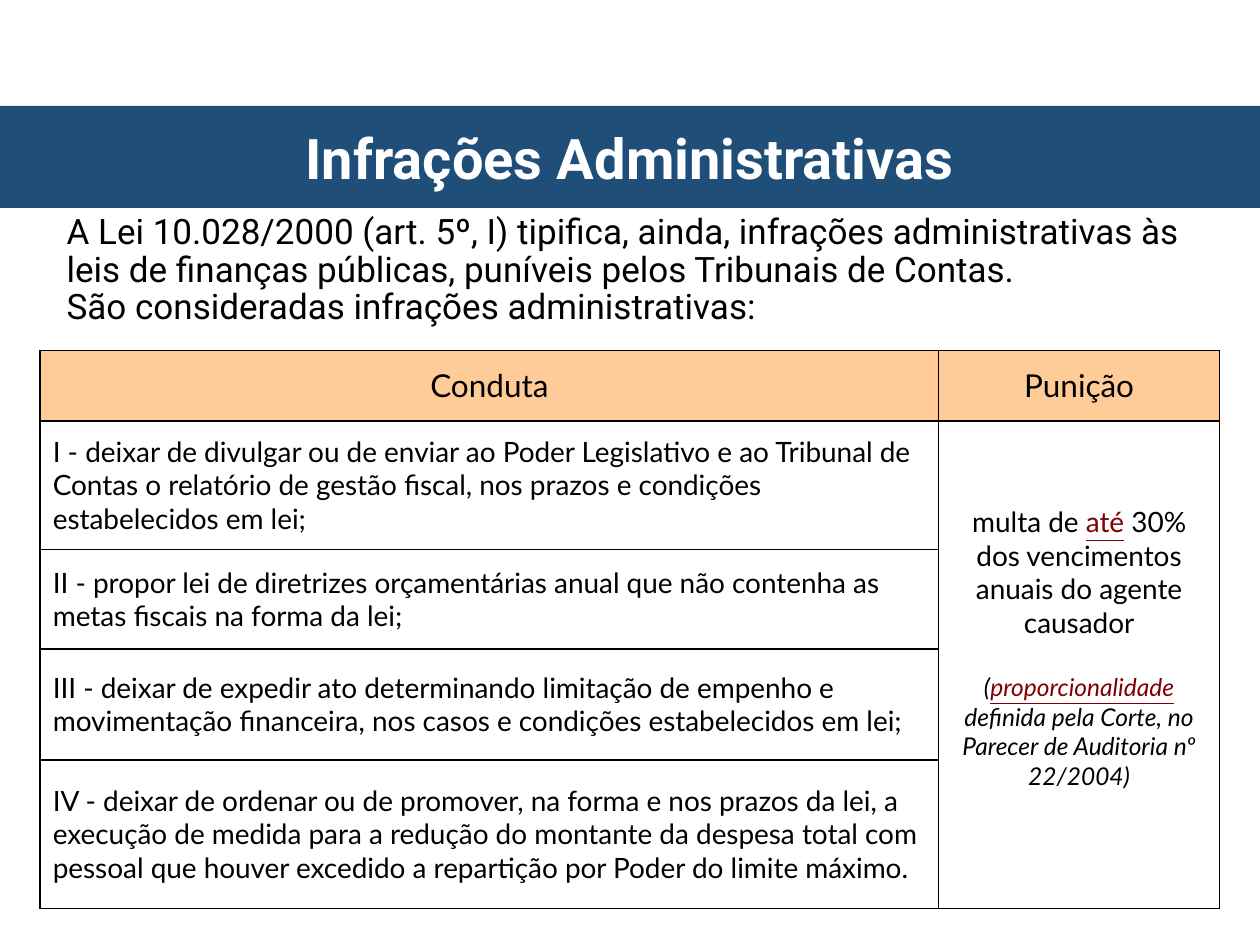
import pptx
import pptx.util
import pptx.dml.color
import pptx.enum.shapes
import pptx.enum.text
import pptx.oxml
import pptx.oxml.ns

Pt = pptx.util.Pt
RGBColor = pptx.dml.color.RGBColor
MIDDLE = pptx.enum.text.MSO_ANCHOR.MIDDLE
CENTER = pptx.enum.text.PP_ALIGN.CENTER
LEFT = pptx.enum.text.PP_ALIGN.LEFT

BLACK = RGBColor(0x00, 0x00, 0x00)
WHITE = RGBColor(0xFF, 0xFF, 0xFF)
NAVY = RGBColor(0x1F, 0x4E, 0x79)
PEACH = RGBColor(0xFF, 0xCC, 0x99)
MAROON = RGBColor(0x80, 0x00, 0x00)


def add_run(p, text, font, size, color=BLACK):
    r = p.add_run()
    r.text = text
    r.font.name = font
    r.font.size = Pt(size)
    r.font.color.rgb = color
    return r


def style_cell(cell, fill):
    cell.vertical_anchor = MIDDLE
    cell.fill.solid()
    cell.fill.fore_color.rgb = fill
    tc_pr = cell._tc.get_or_add_tcPr()
    # Borders come before the fill, in the order left, right, top, bottom
    for i, side in enumerate("LRTB"):
        tc_pr.insert(i, pptx.oxml.parse_xml(
            f'<a:ln{side} {pptx.oxml.ns.nsdecls("a")} w="12700"><a:solidFill>'
            f'<a:srgbClr val="{BLACK}"/></a:solidFill></a:ln{side}>'))


prs = pptx.Presentation()
prs.slide_width = Pt(720)
prs.slide_height = Pt(540)
s = prs.slides.add_slide(prs.slide_layouts[6])

# Introduction
tf = s.shapes.add_textbox(Pt(31), Pt(118.8), Pt(657.4), Pt(90)).text_frame
tf.word_wrap = True
for i, text in enumerate([
        "A Lei 10.028/2000 (art. 5º, I) tipifica, ainda, infrações administrativas "
        "às leis de finanças públicas, puníveis pelos Tribunais de Contas.",
        "São consideradas infrações administrativas:"]):
    p = tf.paragraphs[0]
    if i:
        p.add_line_break()
    p.line_spacing = 0.9
    add_run(p, text, "Roboto", 20)

# Table of conducts and punishment
col_widths = [513.4, 160.6]
row_heights = [40.3, 73.4, 56.9, 63.4, 85]
conducts = [
    "I - deixar de divulgar ou de enviar ao Poder Legislativo e ao Tribunal de "
    "Contas o relatório de gestão fiscal, nos prazos e condições estabelecidos em lei;",
    "II - propor lei de diretrizes orçamentárias anual que não contenha as metas "
    "fiscais na forma da lei;",
    "III - deixar de expedir ato determinando limitação de empenho e movimentação "
    "financeira, nos casos e condições estabelecidos em lei;",
    "IV - deixar de ordenar ou de promover, na forma e nos prazos da lei, a execução "
    "de medida para a redução do montante da despesa total com pessoal que houver "
    "excedido a repartição por Poder do limite máximo.",
]
table = s.shapes.add_table(len(row_heights), 2, Pt(23), Pt(200.2),
                           Pt(sum(col_widths)), Pt(sum(row_heights))).table
for col, width in zip(table.columns, col_widths):
    col.width = Pt(width)
for i, (row, height) in enumerate(zip(table.rows, row_heights)):
    row.height = Pt(height)
    for cell in row.cells:
        style_cell(cell, WHITE if i else PEACH)

# Header row
for cell, text in zip(table.rows[0].cells, ["Conduta", "Punição"]):
    p = cell.text_frame.paragraphs[0]
    p.alignment = CENTER
    add_run(p, text, "Lato", 18).font.bold = False

# Conducts
for i, text in enumerate(conducts, 1):
    p = table.cell(i, 0).text_frame.paragraphs[0]
    p.alignment = LEFT
    add_run(p, text, "Lato", 16)

# Punishment, shared by all conducts
cell = table.cell(1, 1)
cell.merge(table.cell(4, 1))
cell.margin_bottom = Pt(22.8)
tf = cell.text_frame
punishment = [
    (16, False, ["multa de ", "até", " 30% dos vencimentos anuais do agente causador"]),
    (14, True, ["(", "proporcionalidade",
                " definida pela Corte, no Parecer de Auditoria nº 22/2004)"]),
]
for i, (size, italic, parts) in enumerate(punishment):
    p = tf.add_paragraph() if i else tf.paragraphs[0]
    p.alignment = CENTER
    if i:
        p.space_before = Pt(19.2)
    for j, text in enumerate(parts):
        key = j == 1
        r = add_run(p, text, "Lato", size, MAROON if key else BLACK)
        r.font.italic = italic
        r.font.underline = key

# Title band
sp = s.shapes.add_shape(pptx.enum.shapes.MSO_SHAPE.RECTANGLE,
                        Pt(0), Pt(60.5), Pt(720), Pt(58.3))
sp.shadow.inherit = False
sp.fill.solid()
sp.fill.fore_color.rgb = NAVY
sp.line.fill.background()
tf = sp.text_frame
tf.word_wrap = True
tf.vertical_anchor = MIDDLE
p = tf.paragraphs[0]
p.alignment = CENTER
add_run(p, "Infrações Administrativas", "Roboto", 32, WHITE).font.bold = True

prs.save("out.pptx")
